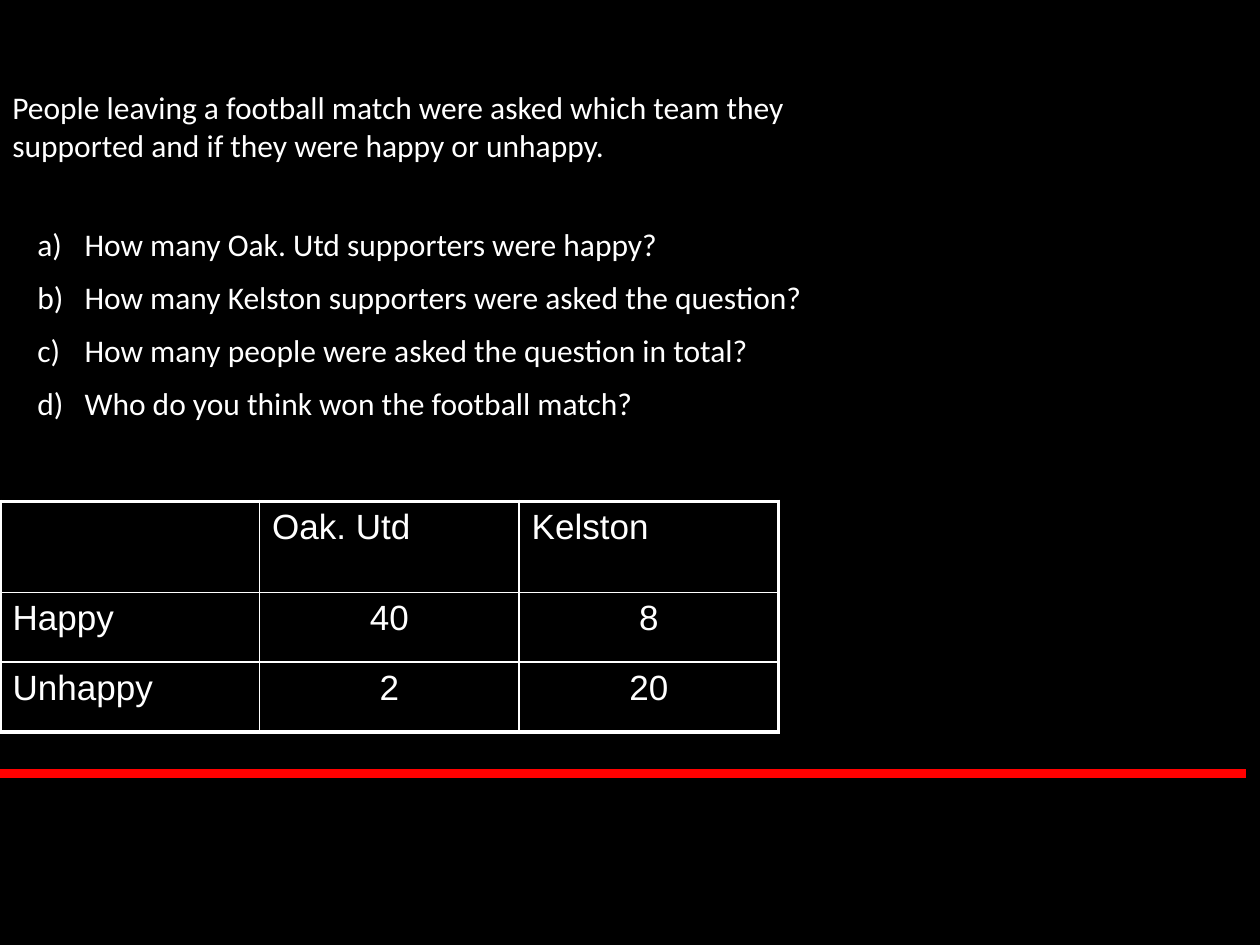
from lxml import etree
from pptx import Presentation
from pptx.dml.color import RGBColor
from pptx.enum.shapes import MSO_CONNECTOR
from pptx.enum.text import PP_ALIGN
from pptx.oxml.ns import qn
from pptx.util import Pt

BLACK = RGBColor(0, 0, 0)
WHITE = RGBColor(255, 255, 255)
RED = RGBColor(255, 0, 0)
LEFT, CENTER = PP_ALIGN.LEFT, PP_ALIGN.CENTER
STRAIGHT = MSO_CONNECTOR.STRAIGHT

INTRO = ("People leaving a football match were asked which team they "
         "supported and if they were happy or unhappy.")
QUESTIONS = [
    "How many Oak. Utd supporters were happy?",
    "How many Kelston supporters were asked the question?",
    "How many people were asked the question in total?",
    "Who do you think won the football match?",
]
RESULTS = [
    ["", "Oak. Utd", "Kelston"],
    ["Happy", "40", "8"],
    ["Unhappy", "2", "20"],
]


def write(para, text, size=18, font="Calibri", color=WHITE, align=LEFT, before=0):
    """Put formatted text into a paragraph."""
    para.alignment = align
    para.space_before = Pt(before)
    span = para.add_run()
    span.text = text
    span.font.size = Pt(size)
    span.font.name = font
    span.font.color.rgb = color


def number_para(para, indent):
    """Give a paragraph an automatic letter with a hanging indent."""
    properties = para._p.get_or_add_pPr()
    properties.set("marL", str(Pt(indent)))
    properties.set("indent", str(-Pt(indent)))
    etree.SubElement(properties, qn("a:buFont"), typeface="+mj-lt")
    etree.SubElement(properties, qn("a:buAutoNum"), type="alphaLcParenR")


def add_intro(page, left, top, width, height):
    """Place the introduction in the lower part of its box."""
    frame = page.shapes.add_textbox(Pt(left), Pt(top), Pt(width), Pt(height)).text_frame
    frame.word_wrap = True
    frame.margin_top = Pt(35.5)
    write(frame.paragraphs[0], INTRO)


def add_questions(page, left, top, width, height):
    """Place the lettered list of questions."""
    frame = page.shapes.add_textbox(Pt(left), Pt(top), Pt(width), Pt(height)).text_frame
    frame.word_wrap = True
    for index, question in enumerate(QUESTIONS):
        para = frame.paragraphs[0] if index == 0 else frame.add_paragraph()
        write(para, question, before=8.6 if index else 0)
        number_para(para, 27)


def set_borders(cell, widths):
    """Draw white cell borders with the given width for each side."""
    properties = cell._tc.get_or_add_tcPr()
    for position, (side, width) in enumerate(widths.items()):
        line = etree.Element(qn(f"a:ln{side}"), w=str(Pt(width)))
        fill = etree.SubElement(line, qn("a:solidFill"))
        etree.SubElement(fill, qn("a:srgbClr"), val=str(WHITE))
        properties.insert(position, line)


def add_results(page, left, top, width, height):
    """Place the results table with a thick outline and thin inner lines."""
    rows, columns = len(RESULTS), len(RESULTS[0])
    table = page.shapes.add_table(
        rows, columns, Pt(left), Pt(top), Pt(width), Pt(height)).table
    table.first_row = table.horz_banding = False
    header_height = 52
    for index, row in enumerate(table.rows):
        row.height = Pt((height - header_height) / (rows - 1) if index else header_height)
    for r, values in enumerate(RESULTS):
        for c, value in enumerate(values):
            cell = table.cell(r, c)
            cell.fill.background()
            if value:
                write(cell.text_frame.paragraphs[0], value, size=20, font="Arial",
                      align=CENTER if r and c else LEFT)
            edges = {"L": c == 0, "R": c == columns - 1, "T": r == 0, "B": r == rows - 1}
            set_borders(cell, {side: 2.25 if outer else 1 for side, outer in edges.items()})


def add_rule(page, left, top, width):
    """Draw the red horizontal rule."""
    rule = page.shapes.add_connector(STRAIGHT, Pt(left), Pt(top), Pt(left + width), Pt(top))
    rule.line.color.rgb = RED
    rule.line.width = Pt(5)
    etree.SubElement(rule._element.spPr, qn("a:effectLst"))


def main():
    """Build and save the deck."""
    deck = Presentation()
    deck.slide_width, deck.slide_height = Pt(720), Pt(540)
    page = deck.slides.add_slide(deck.slide_layouts[6])
    page.background.fill.solid()
    page.background.fill.fore_color.rgb = BLACK
    add_intro(page, 0, 15, 482.4, 83.5)
    add_results(page, 0, 286.6, 445, 131.6)
    add_questions(page, 14.2, 125.3, 635, 127.4)
    add_rule(page, -8, 442, 720)
    deck.save("out.pptx")


if __name__ == "__main__":
    main()
